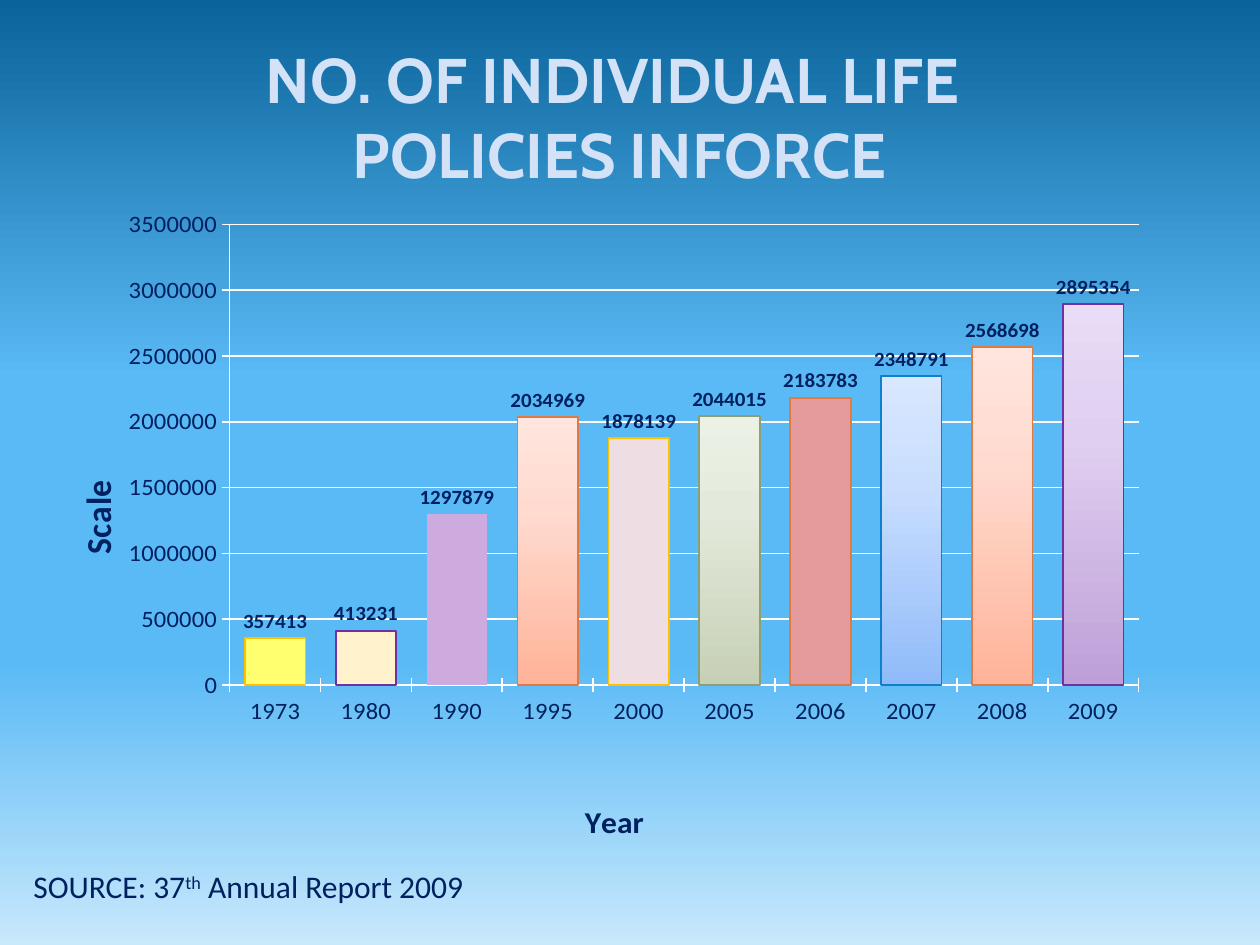
from dataclasses import dataclass

from lxml.etree import SubElement
from pptx import Presentation
from pptx.chart.data import CategoryChartData
from pptx.dml.color import RGBColor
from pptx.enum.chart import XL_CHART_TYPE, XL_LABEL_POSITION, XL_TICK_MARK
from pptx.enum.text import MSO_AUTO_SIZE, PP_ALIGN
from pptx.oxml.ns import qn
from pptx.util import Inches, Pt


@dataclass(frozen=True)
class Theme:
    ink: str = "002060"
    white: str = "FFFFFF"
    gold: str = "FFC000"
    purple: str = "7030A0"
    orange: str = "E07A44"
    green: str = "8CA078"
    blue: str = "0F80CC"
    edge: str = "007ECB"
    sky: tuple = ((0, "0A639A"), (40, "5ABAF5"), (70, "5ABAF5"), (100, "C8E8FC"))
    shine: tuple = ((10, "F2F6FC"), (60, "D4E2F8"), (100, "7CAEF1"))
    peach: tuple = ((0, "FFB399"), (65, "FFDBCF"), (100, "FFE5DE"))
    sage: tuple = ((0, "C6D0B6"), (65, "E4EADB"), (100, "ECF1E5"))
    azure: tuple = ((0, "90BBF9"), (65, "C9DEFF"), (100, "D9E7FF"))
    lilac: tuple = ((0, "BE9FD8"), (65, "E0CFF0"), (100, "E9DCF6"))
    head: str = "Cabin"
    body: str = "Calibri"
    title: int = 36
    scale: int = 20
    note: int = 18
    tick: int = 14
    label: int = 12
    base: int = 10


T = Theme()
WIDE, HIGH = Inches(10), Inches(7.5)
COLS, ROWS = 120, 90

BARS = (
    ("1973", 357413, "FFFF70", T.gold),
    ("1980", 413231, "FFF2CC", T.purple),
    ("1990", 1297879, "CDABDF", None),
    ("1995", 2034969, T.peach, T.orange),
    ("2000", 1878139, "EFDDE4", T.gold),
    ("2005", 2044015, T.sage, T.green),
    ("2006", 2183783, "E59B9B", T.orange),
    ("2007", 2348791, T.azure, T.blue),
    ("2008", 2568698, T.peach, T.orange),
    ("2009", 2895354, T.lilac, T.purple),
)


def grid(left, top, width, height):
    col, row = WIDE / COLS, HIGH / ROWS
    return int(left * col), int(top * row), int(width * col), int(height * row)


def paint(fill, color, owner=None, angle=270):
    if isinstance(color, str):
        fill.solid()
        fill.fore_color.rgb = RGBColor.from_string(color)
        return
    fill.gradient()
    fill.gradient_angle = angle
    stops = list(owner.iter(qn("a:gsLst")))[-1]
    for stop in list(stops):
        stops.remove(stop)
    for share, tone in color:
        stop = SubElement(stops, qn("a:gs"), pos=str(share * 1000))
        SubElement(stop, qn("a:srgbClr"), val=tone)


def style(font, size, color=T.ink, face=T.body, bold=False, owner=None):
    font.name, font.size, font.bold = face, Pt(size), bold
    paint(font.fill, color, owner)


def trace(props, color, width):
    line = props.makeelement(qn("a:ln"), w=str(Pt(width)))
    fill = SubElement(line, qn("a:solidFill"))
    SubElement(fill, qn("a:srgbClr"), val=color)
    props.insert(0, line)


def write(para, text, raised=False, edge=None, **form):
    for i, part in enumerate(text.split("\n")):
        if i:
            para.add_line_break()
        run = para.add_run()
        run.text = part
        style(run.font, owner=run._r, **form)
        props = run._r.find(qn("a:rPr"))
        if raised:
            props.set("baseline", "30000")
        if edge:
            trace(props, edge, 1.93)


def block(slide, area, align=PP_ALIGN.LEFT):
    frame = slide.shapes.add_textbox(*grid(*area)).text_frame
    frame.word_wrap = True
    frame.auto_size = MSO_AUTO_SIZE.SHAPE_TO_FIT_TEXT
    para = frame.paragraphs[0]
    para.alignment = align
    return para


def place(owner, **spots):
    node = owner.find(qn("c:layout"))
    if node is None:
        node = owner.makeelement(qn("c:layout"))
        owner.insert(0, node)
    hand = SubElement(node, qn("c:manualLayout"))
    if "w" in spots:
        SubElement(hand, qn("c:layoutTarget"), val="inner")
    for key in ("x", "y"):
        SubElement(hand, qn(f"c:{key}Mode"), val="edge")
    for key, share in spots.items():
        SubElement(hand, qn(f"c:{key}"), val=str(share))


def rule(line, color=T.white, width=1):
    paint(line.fill, color)
    line.width = Pt(width)


def scale(axis, name, size):
    axis.major_tick_mark = XL_TICK_MARK.CROSS
    rule(axis.format.line)
    style(axis.tick_labels.font, T.tick)
    para = axis.axis_title.text_frame.paragraphs[0]
    write(para, name, size=size, bold=True)


def graph(slide, area):
    data = CategoryChartData()
    data.categories = [bar[0] for bar in BARS]
    data.add_series("Series 1", [bar[1] for bar in BARS])
    kind = XL_CHART_TYPE.COLUMN_CLUSTERED
    chart = slide.shapes.add_chart(kind, *grid(*area), data).chart
    chart.has_title = chart.has_legend = False
    style(chart.font, T.base, T.white)

    scale(chart.category_axis, "Year", T.note)
    scale(chart.value_axis, "Scale", T.scale)
    chart.value_axis.has_major_gridlines = True
    rule(chart.value_axis.major_gridlines.format.line)

    root = chart.element
    place(next(root.iter(qn("c:plotArea"))), x=0.17, y=0, w=0.78, h=0.75)
    year, level = root.iter(qn("c:title"))
    place(year, x=0.47, y=0.93)
    place(level, x=0.03, y=0.41)
    next(level.iter(qn("a:bodyPr"))).set("rot", "-5400000")

    plot = chart.plots[0]
    plot.gap_width, plot.vary_by_categories = 50, False
    plot.has_data_labels = True
    tags = plot.data_labels
    tags.show_value = True
    tags.position = XL_LABEL_POSITION.OUTSIDE_END
    style(tags.font, T.label, bold=True)
    series = plot.series[0]
    paint(series.format.fill, T.gold)
    for i, (_, _, color, edge) in enumerate(BARS):
        form = series.points[i].format
        paint(form.fill, color, root, 90)
        if edge:
            rule(form.line, edge)
        else:
            form.line.fill.background()


def main():
    deck = Presentation()
    deck.slide_width, deck.slide_height = WIDE, HIGH
    slide = deck.slides.add_slide(deck.slide_layouts[6])
    paint(slide.background.fill, T.sky, slide.element)
    graph(slide, (3, 20, 111, 61))
    head = block(slide, (1, 3.25, 116, 15.75), PP_ALIGN.CENTER)
    write(head, "NO. OF INDIVIDUAL LIFE \nPOLICIES INFORCE", size=T.title,
          color=T.shine, face=T.head, bold=True, edge=T.edge)
    note = block(slide, (2, 82, 47, 4.8))
    write(note, "SOURCE: 37", size=T.note)
    write(note, "th", size=T.note, raised=True)
    write(note, " Annual Report 2009", size=T.note)
    deck.save("out.pptx")


if __name__ == "__main__":
    main()
